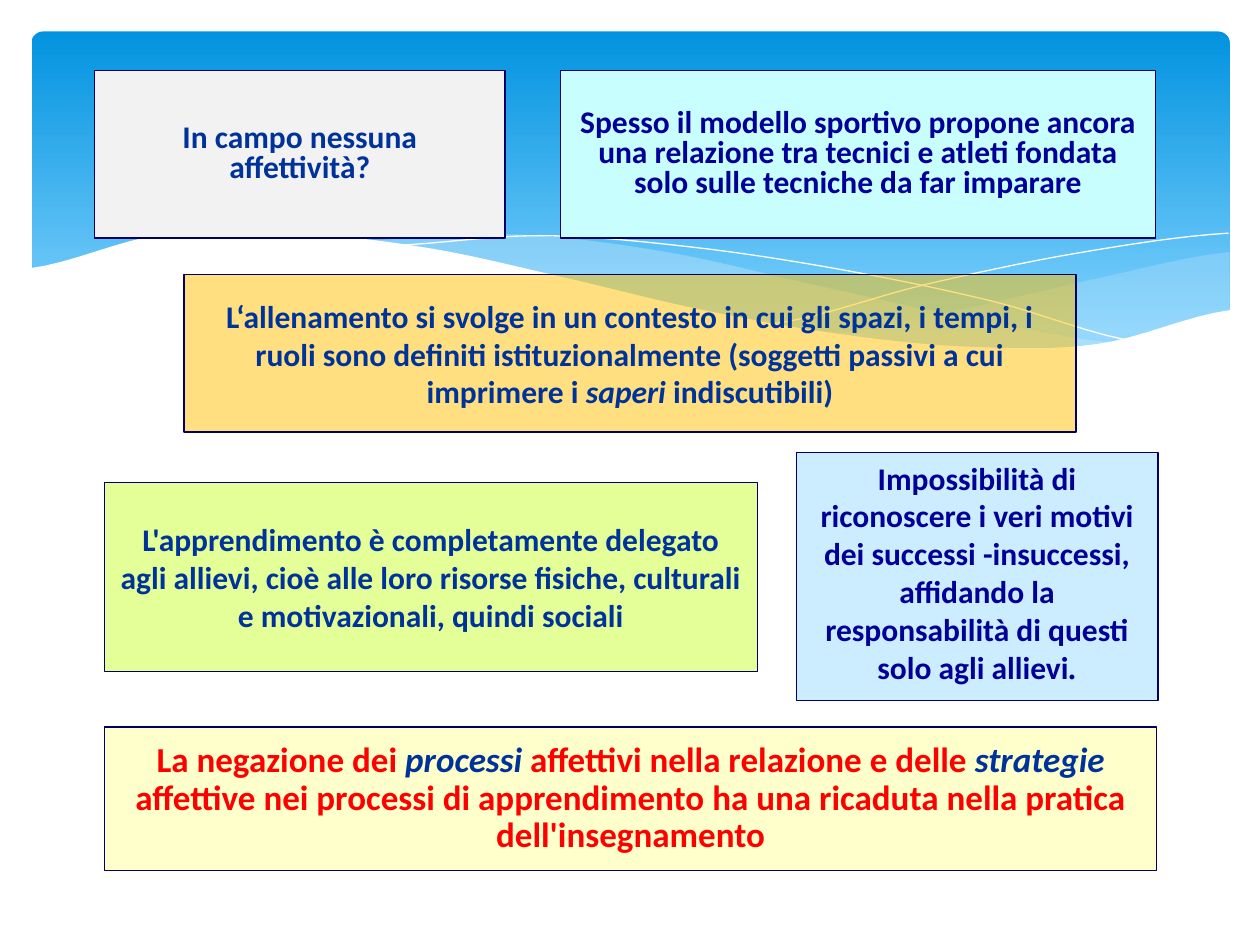
from dataclasses import dataclass
from typing import Optional

from lxml import etree
from pptx import Presentation
from pptx.dml.color import RGBColor
from pptx.enum.shapes import MSO_SHAPE as Preset
from pptx.enum.text import MSO_ANCHOR as Anchor, PP_ALIGN as Align
from pptx.oxml.ns import qn
from pptx.util import Inches, Pt

COLORS = {
    "sky top": "0293E0", "sky bottom": "83D3FE", "mist": "C6E7FC", "white": "FFFFFF",
    "border": "000066", "blue": "003399", "navy": "000099", "red": "FF0000",
    "gray": "F2F2F2", "ice": "CCECFF", "aqua": "C8FEFD",
    "amber": "FFC000", "lime": "CCFF33", "cream": "FFFFCC",
}
STEPS = 8  # straight pieces between two heights of an edge


@dataclass
class Edge:
    """A smooth curve through heights at equal distances from start to end."""
    start: float
    end: float
    heights: list[float]


@dataclass
class Wave:
    edges: list[Edge]
    fill: Optional[str] = None  # without a fill the wave is an open white line
    opacity: int = 100


@dataclass
class Run:
    text: str
    color: str = "blue"
    italic: bool = False
    font: str = "Calibri"


@dataclass
class Box:
    left: float
    top: float
    width: float
    height: float
    fill: str
    runs: list[Run]
    opacity: int = 100
    size: int = 18
    line_spacing: float = 1.0
    space_before: float = 0.2  # share of the font size
    anchor: Anchor = Anchor.MIDDLE


# Header waves, from back to front
WAVES = [
    Wave([Edge(9.76, 6.61, [2, 2.21, 2.45, 2.65]),
          Edge(6.61, 9.76, [2.65, 2.77, 2.74, 2.47])], "mist", 29),
    Wave([Edge(8.93, 2.86, [2.73, 2.53, 2.27, 2, 1.86, 1.91]),
          Edge(2.86, 8.93, [1.91, 2.12, 2.4, 2.64, 2.77, 2.73])], "mist", 40),
    Wave([Edge(3.09, 9.07, [1.95, 1.87, 1.96, 2.14, 2.39, 2.72])]),
    Wave([Edge(6.13, 9.75, [2.57, 2.26, 2.01, 1.85])]),
    Wave([Edge(9.77, 0.23, [2.46, 2.73, 2.75, 2.64, 2.45, 2.2, 1.97, 1.85, 1.86, 2.13]),
          Edge(0.23, 9.77, [3.29, 3.29])], "white"),
]

BOXES = [
    Box(0.75, 0.56, 3.26, 1.33, "gray", [Run("In campo nessuna\naffettività?")],
        line_spacing=0.8, space_before=0),
    Box(6.32, 3.59, 2.87, 1.97, "ice",
        [Run("Impossibilità di riconoscere i veri motivi dei successi -insuccessi, "
             "affidando la responsabilità di questi solo agli allievi", "navy"),
         Run(".", "navy", font="TeX Gyre Pagella")], anchor=Anchor.TOP),
    Box(4.45, 0.56, 4.72, 1.33, "aqua",
        [Run("Spesso il modello sportivo propone ancora una relazione tra tecnici e atleti "
             "fondata solo sulle tecniche da far imparare", "navy")],
        line_spacing=0.8, space_before=0),
    Box(1.46, 2.18, 7.08, 1.25, "amber",
        [Run("L‘allenamento si svolge in un contesto in cui gli spazi, i tempi, i ruoli sono "
             "definiti istituzionalmente (soggetti passivi a cui imprimere i "),
         Run("saperi ", italic=True), Run("indiscutibili)")], opacity=50),
    Box(0.83, 3.83, 5.18, 1.5, "lime",
        [Run("L'apprendimento è completamente delegato agli allievi, cioè alle loro risorse "
             "fisiche, culturali e motivazionali, quindi sociali")], opacity=50),
    Box(0.83, 5.77, 8.35, 1.14, "cream",
        [Run("La negazione dei ", "red"), Run("processi", italic=True),
         Run(" affettivi nella relazione e delle ", "red"), Run("strategie", italic=True),
         Run(" affettive nei processi di apprendimento ha una ricaduta nella pratica "
             "dell'insegnamento", "red")], size=20, line_spacing=0.9),
]


def rgb(name: str) -> RGBColor:
    return RGBColor.from_string(COLORS[name])


def fill_shape(shape, color: str, opacity: int) -> None:
    shape.fill.solid()
    shape.fill.fore_color.rgb = rgb(color)
    if opacity < 100:
        solid = shape.element.spPr.find(qn("a:solidFill"))
        etree.SubElement(solid[0], qn("a:alpha"), val=str(opacity * 1000))


def edge_points(edge: Edge) -> list[tuple[int, int]]:
    """Points along a Catmull-Rom curve through the heights."""
    heights = [edge.heights[0], *edge.heights, edge.heights[-1]]
    count = (len(edge.heights) - 1) * STEPS
    points = []
    for index in range(count + 1):
        piece = min(index // STEPS, len(edge.heights) - 2)
        t = index / STEPS - piece
        before, first, second, after = heights[piece:piece + 4]
        y = first + t / 2 * (second - before
                             + t * (2 * before - 5 * first + 4 * second - after)
                             + t * t * (3 * (first - second) + after - before))
        x = edge.start + (edge.end - edge.start) * index / count
        points.append((Inches(x), Inches(y)))
    return points


def draw_sky(slide) -> None:
    sky = slide.shapes.add_shape(Preset.ROUNDED_RECTANGLE, Inches(0.25), Inches(0.25),
                                 Inches(9.51), Inches(2.7))
    sky.adjustments[0] = 0.034
    sky.shadow.inherit = False
    sky.line.fill.background()
    sky.fill.gradient()
    sky.fill.gradient_angle = 270
    stops = [(0, "sky top"), (0.9, "sky bottom")]
    for stop, (position, color) in zip(sky.fill.gradient_stops, stops):
        stop.position = position
        stop.color.rgb = rgb(color)


def draw_wave(slide, wave: Wave) -> None:
    points = [point for edge in wave.edges for point in edge_points(edge)]
    builder = slide.shapes.build_freeform(*points[0])
    builder.add_line_segments(points[1:], close=wave.fill is not None)
    shape = builder.convert_to_shape()
    shape.shadow.inherit = False
    if wave.fill:
        fill_shape(shape, wave.fill, wave.opacity)
        shape.line.fill.background()
    else:
        shape.fill.background()
        shape.line.color.rgb = rgb("white")
        shape.line.width = Pt(0)


def draw_box(slide, box: Box) -> None:
    shape = slide.shapes.add_shape(Preset.RECTANGLE, Inches(box.left), Inches(box.top),
                                   Inches(box.width), Inches(box.height))
    shape.shadow.inherit = False
    fill_shape(shape, box.fill, box.opacity)
    shape.line.color.rgb = rgb("border")
    shape.line.width = Pt(0.75)
    frame = shape.text_frame
    frame.word_wrap = True
    frame.vertical_anchor = box.anchor
    paragraph = frame.paragraphs[0]
    paragraph.alignment = Align.CENTER
    paragraph.line_spacing = box.line_spacing
    paragraph.space_before = Pt(box.size * box.space_before)
    paragraph.font.size = Pt(box.size)
    paragraph.font.bold = True
    for part in box.runs:
        for index, line in enumerate(part.text.split("\n")):
            if index:
                paragraph.add_line_break()
            run = paragraph.add_run()
            run.text = line
            run.font.name = part.font
            run.font.italic = part.italic
            run.font.color.rgb = rgb(part.color)


def main() -> None:
    presentation = Presentation()
    presentation.slide_width, presentation.slide_height = Inches(10), Inches(7.5)
    slide = presentation.slides.add_slide(presentation.slide_layouts[6])
    # Header background
    draw_sky(slide)
    for wave in WAVES:
        draw_wave(slide, wave)
    # Text boxes
    for box in BOXES:
        draw_box(slide, box)
    presentation.save("out.pptx")


if __name__ == "__main__":
    main()
